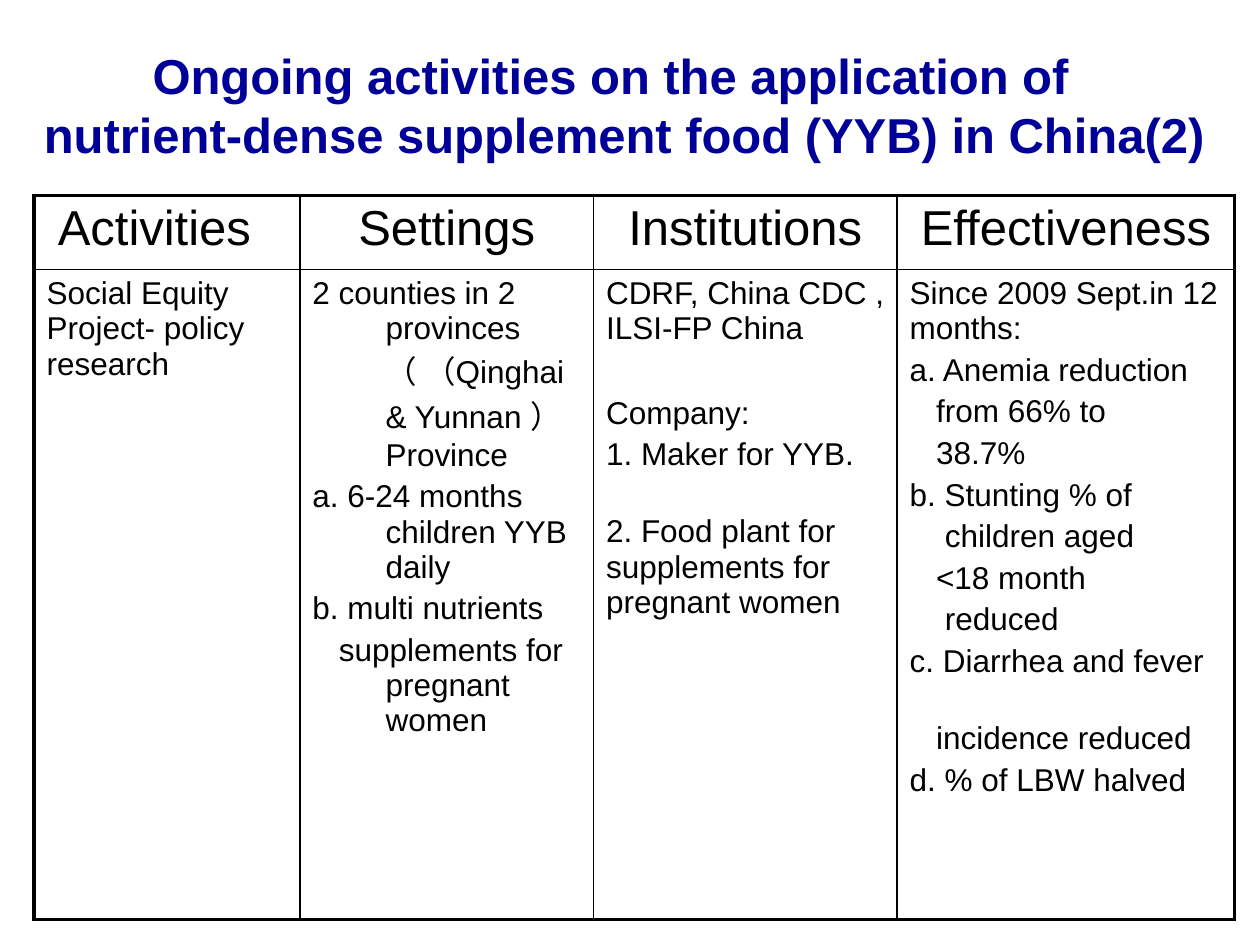
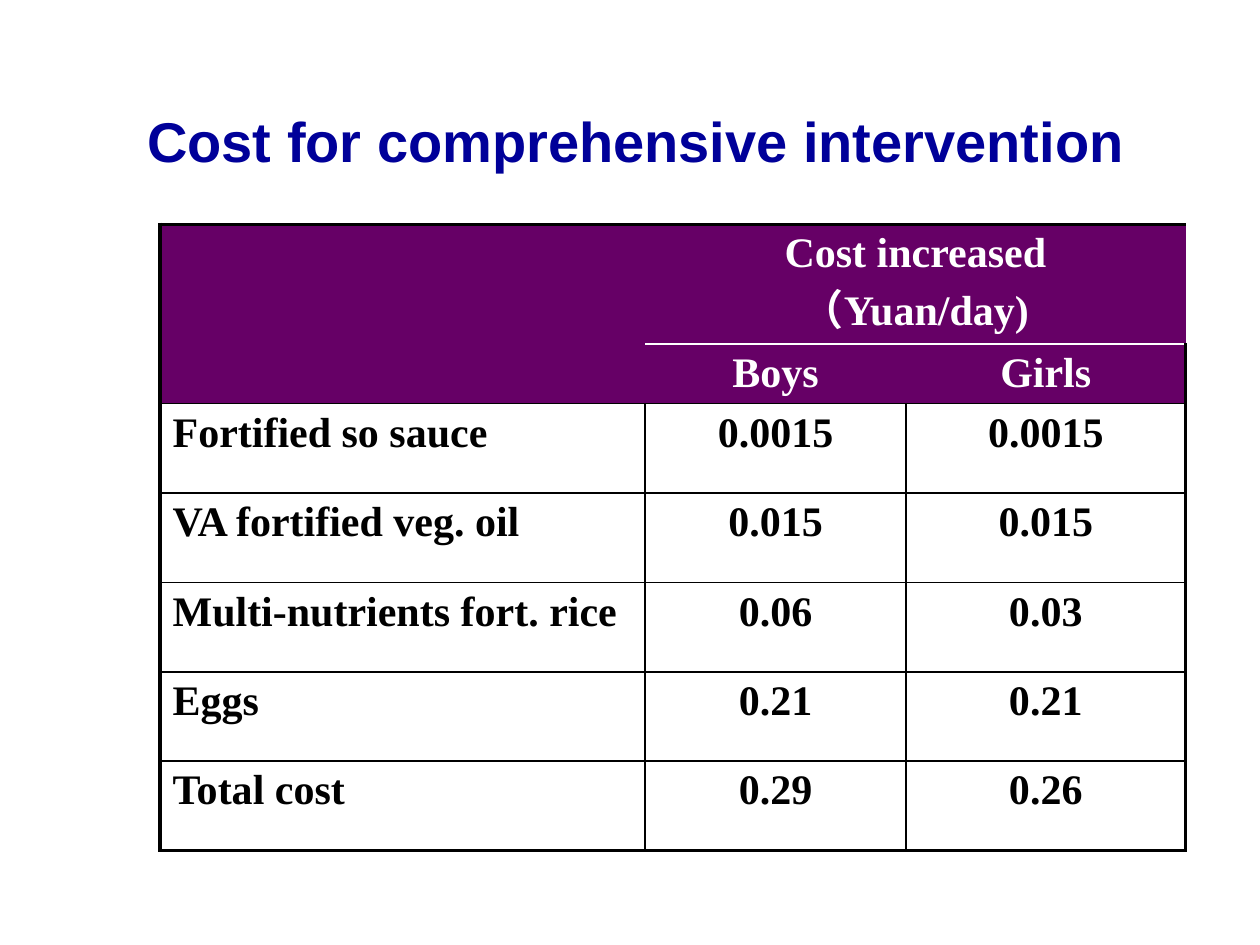
"""Build two slides: activities on supplement food in China and the cost of intervention."""
from lxml import etree
from pptx import Presentation
from pptx.dml.color import RGBColor
from pptx.enum.text import MSO_ANCHOR, MSO_AUTO_SIZE, PP_ALIGN
from pptx.oxml.ns import qn
from pptx.util import Inches, Pt

NAVY, PURPLE, BLACK, WHITE = "000099", "660066", "000000", "FFFFFF"
THICK, RULE, THIN = 2.25, 1.5, 1
rgb = RGBColor.from_string


def write_cell(cell, entries, size, font, colour=BLACK, bold=False, align=PP_ALIGN.LEFT):
    """Write entries of (text, left margin, first-line indent, space before)."""
    frame = cell.text_frame
    for number, (text, margin, indent, gap) in enumerate(entries):
        paragraph = frame.paragraphs[0] if number == 0 else frame.add_paragraph()
        paragraph.text = text
        paragraph.alignment = align
        if margin:
            properties = paragraph._p.get_or_add_pPr()
            properties.set("marL", str(Inches(margin)))
            properties.set("indent", str(Inches(indent)))
        if number:
            paragraph.space_before = Pt(gap)
        paragraph.font.size = Pt(size)
        paragraph.font.name = font
        paragraph.font.bold = bold
        paragraph.font.color.rgb = rgb(colour)


def finish_cell(cell, edges, fill=None):
    """Draw the edges given as side: (colour, points) or None, then fill the cell."""
    properties = cell._tc.get_or_add_tcPr()
    for side in "LRTB":
        line = etree.SubElement(properties, qn(f"a:ln{side}"))
        if edges[side]:
            colour, width = edges[side]
            line.set("w", str(Pt(width)))
            solid = etree.SubElement(line, qn("a:solidFill"))
            etree.SubElement(solid, qn("a:srgbClr")).set("val", colour)
        else:
            line.set("w", "0")
            etree.SubElement(line, qn("a:noFill"))
    if fill:
        cell.fill.solid()
        cell.fill.fore_color.rgb = rgb(fill)
    else:
        cell.fill.background()


deck = Presentation()
deck.slide_width, deck.slide_height = Inches(10), Inches(7.5)

pages = [
    ("Ongoing activities on the application of \v nutrient-dense supplement food (YYB) in China(2)",
     28, (-0.2, 0.28, 10.2, 1.1), (0.27, 1.55), [2.11, 2.33, 2.41, 2.68], [0.59, 5.16]),
    ("Cost for comprehensive intervention",
     32, (0.55, 0.36, 9, 1.5), (1.27, 1.78), [3.85, 2.07, 2.22], [0.56, 0.47] + [0.71] * 5),
]
tables = []
for heading, size, title_box, corner, widths, heights in pages:
    slide = deck.slides.add_slide(deck.slide_layouts[5])
    title = slide.shapes.title
    title.left, title.top, title.width, title.height = map(Inches, title_box)
    title.text_frame.auto_size = MSO_AUTO_SIZE.NONE
    title.text_frame.vertical_anchor = MSO_ANCHOR.MIDDLE
    title.text_frame.text = heading
    line = title.text_frame.paragraphs[0]
    line.alignment = PP_ALIGN.CENTER
    line.font.size, line.font.name, line.font.bold = Pt(size), "Arial", True
    line.font.color.rgb = rgb(NAVY)

    table = slide.shapes.add_table(len(heights), len(widths), *map(Inches, corner),
                                   Inches(sum(widths)), Inches(sum(heights))).table
    table.first_row = table.horz_banding = False
    for column, width in zip(table.columns, widths):
        column.width = Inches(width)
    for row, height in zip(table.rows, heights):
        row.height = Inches(height)
    tables.append(table)
activities, costs = tables

for column, name in enumerate(["Activities", "Settings", "Institutions", "Effectiveness"]):
    write_cell(activities.cell(0, column), [(name, 0, 0, 0)], 28, "Arial", align=PP_ALIGN.CENTER)
activities.cell(0, 0).margin_right = Inches(0.3)

GAP = 3.6
details = [
    [("Social Equity Project- policy research", 0, 0, 0)],
    [("2 counties in 2 provinces（ （Qinghai & Yunnan ）Province", 0.58, -0.58, 0),
     ("a. 6-24 months children YYB daily", 0.58, -0.58, GAP),
     ("b. multi nutrients", 0.58, -0.58, GAP),
     ("supplements for pregnant women", 0.58, -0.37, GAP)],
    [("CDRF, China CDC , ILSI-FP China", 0, 0, 0),
     ("Company:", 0, 0, 28),
     ("1. Maker for YYB.", 0, 0, GAP),
     ("2. Food plant for supplements for pregnant women", 0, 0, 24)],
    [("Since 2009 Sept.in 12 months:", 0, 0, 0),
     ("a. Anemia reduction", 0, 0, GAP),
     ("from 66% to", 0.21, 0, GAP),
     ("38.7%", 0.21, 0, GAP),
     ("b. Stunting % of", 0, 0, GAP),
     ("children aged", 0.28, 0, GAP),
     ("<18 month", 0.21, 0, GAP),
     ("reduced", 0.28, 0, GAP),
     ("c. Diarrhea and fever", 0, 0, GAP),
     ("incidence reduced", 0.21, 0, 24),
     ("d. % of LBW halved", 0, 0, GAP)],
]
for column, entries in enumerate(details):
    write_cell(activities.cell(1, column), entries, 18, "Arial")

costs.cell(0, 0).merge(costs.cell(1, 0))
costs.cell(0, 1).merge(costs.cell(0, 2))
for row, column, name in [(0, 1, "Cost increased\v（Yuan/day)"), (1, 1, "Boys"), (1, 2, "Girls")]:
    write_cell(costs.cell(row, column), [(name, 0, 0, 0)], 24, "Times New Roman",
               WHITE, True, PP_ALIGN.CENTER)

daily_costs = [
    ("Fortified so sauce", "0.0015", "0.0015"),
    ("VA fortified veg. oil", "0.015", "0.015"),
    ("Multi-nutrients fort. rice", "0.06", "0.03"),
    ("Eggs", "0.21", "0.21"),
    ("Total cost", "0.29", "0.26"),
]
for row, values in enumerate(daily_costs, start=2):
    for column, value in enumerate(values):
        write_cell(costs.cell(row, column), [(value, 0, 0, 0)], 24, "Times New Roman", bold=True,
                   align=PP_ALIGN.CENTER if column else PP_ALIGN.LEFT)

for table, header_rows in [(activities, 0), (costs, 2)]:
    last_row, last_column = len(table.rows) - 1, len(table.columns) - 1
    for row in range(last_row + 1):
        for column in range(last_column + 1):
            in_header = row < header_rows
            inner = None if in_header else (BLACK, THIN)
            edges = {
                "L": inner if column else (BLACK, THICK),
                "R": inner if column < last_column else (BLACK, THICK),
                "T": (BLACK, THIN) if row else (BLACK, THICK),
                "B": (BLACK, THIN) if row < last_row else (BLACK, THICK),
            }
            if in_header:
                edges["B" if row == 0 else "T"] = (WHITE, RULE) if column else None
            finish_cell(table.cell(row, column), edges, PURPLE if in_header else None)

deck.save("out.pptx")
